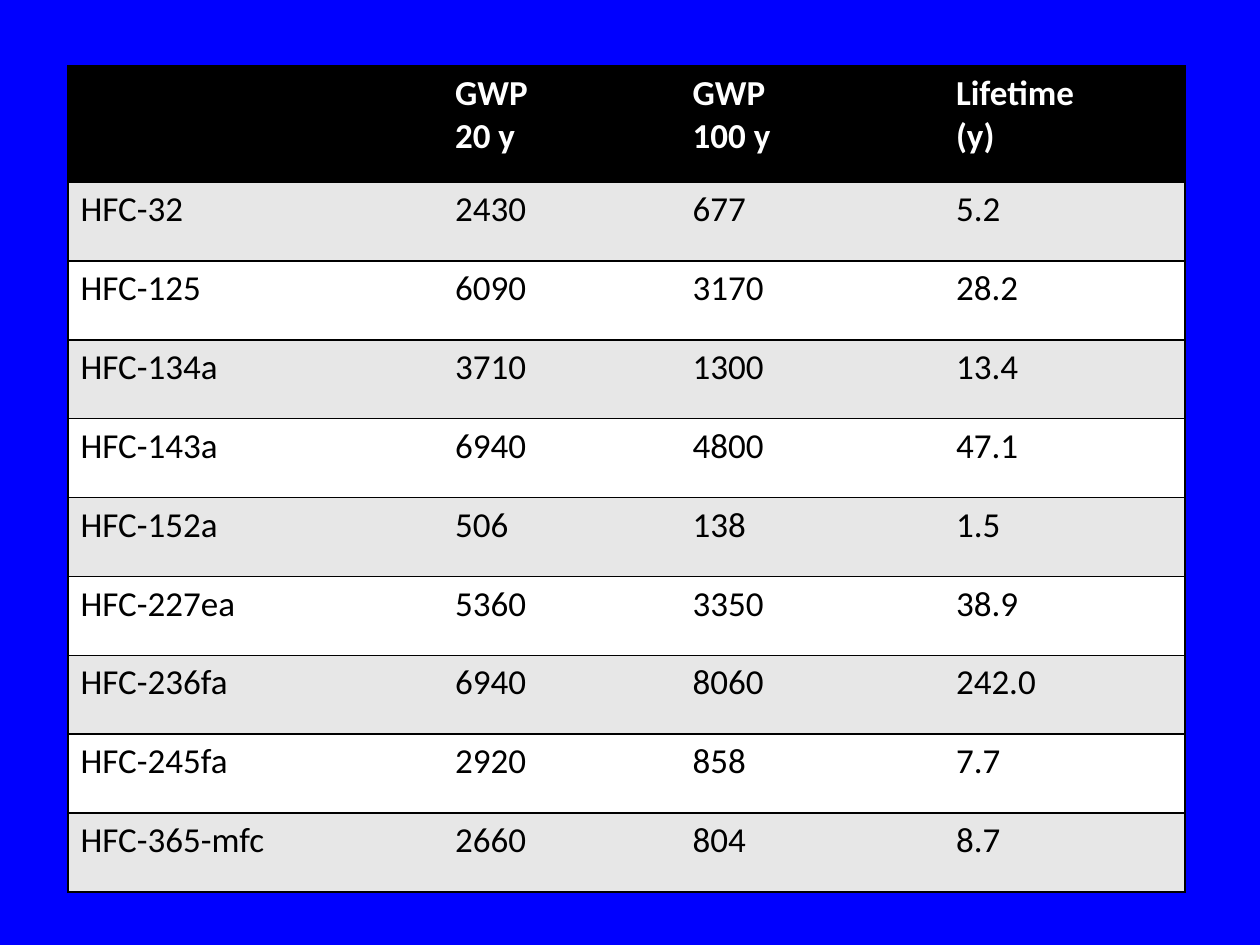
from lxml import etree
from pptx import Presentation
from pptx.dml.color import RGBColor
from pptx.oxml.ns import qn
from pptx.util import Cm, Pt

BLUE = RGBColor(0x00, 0x00, 0xFF)
BLACK = RGBColor(0x00, 0x00, 0x00)
WHITE = RGBColor(0xFF, 0xFF, 0xFF)
GREY = RGBColor(0xE7, 0xE7, 0xE7)

HEADER = ("", "GWP\n20 y", "GWP\n100 y", "Lifetime\n(y)")
GASES = [
    ("HFC-32", "2430", "677", "5.2"),
    ("HFC-125", "6090", "3170", "28.2"),
    ("HFC-134a", "3710", "1300", "13.4"),
    ("HFC-143a", "6940", "4800", "47.1"),
    ("HFC-152a", "506", "138", "1.5"),
    ("HFC-227ea", "5360", "3350", "38.9"),
    ("HFC-236fa", "6940", "8060", "242.0"),
    ("HFC-245fa", "2920", "858", "7.7"),
    ("HFC-365-mfc", "2660", "804", "8.7"),
]
ROWS = [HEADER] + GASES

LEFT, TOP = 1.37, 1.33
COL_WIDTHS = (7.55, 4.79, 5.31, 4.87)
ROW_HEIGHTS = [2.34] + [1.59] * len(GASES)
HEADER_FONT = {"name": "Calibri", "size": Pt(20), "bold": True}
BODY_FONT = {**HEADER_FONT, "bold": False}


def set_borders(cell, visible):
    """Draw the sides named in visible (of L, R, T, B) and hide the others."""
    tc_pr = cell._tc.get_or_add_tcPr()
    for side in "LRTB":
        ln = etree.SubElement(tc_pr, qn(f"a:ln{side}"), w=str(Pt(1)))
        if side in visible:
            fill = etree.SubElement(ln, qn("a:solidFill"))
            etree.SubElement(fill, qn("a:srgbClr"), val=str(BLACK))
        else:
            etree.SubElement(ln, qn("a:noFill"))


def fill_cell(cell, text, background, color, font):
    cell.fill.solid()
    cell.fill.fore_color.rgb = background
    cell.text = text
    for p in cell.text_frame.paragraphs:
        for name, value in font.items():
            setattr(p.font, name, value)
        p.font.color.rgb = color


prs = Presentation()
prs.slide_width, prs.slide_height = Cm(25.4), Cm(19.05)
s = prs.slides.add_slide(prs.slide_layouts[6])
s.background.fill.solid()
s.background.fill.fore_color.rgb = BLUE

table = s.shapes.add_table(
    len(ROWS), len(HEADER), Cm(LEFT), Cm(TOP),
    Cm(sum(COL_WIDTHS)), Cm(sum(ROW_HEIGHTS))).table
table.horz_banding = False
for column, width in zip(table.columns, COL_WIDTHS):
    column.width = Cm(width)
for row, height in zip(table.rows, ROW_HEIGHTS):
    row.height = Cm(height)

last = len(HEADER) - 1
for i, values in enumerate(ROWS):
    if i == 0:
        look = (BLACK, WHITE, HEADER_FONT)
    else:
        look = (GREY if i % 2 else WHITE, BLACK, BODY_FONT)
    for j, text in enumerate(values):
        cell = table.cell(i, j)
        set_borders(cell, "TB" + {0: "L", last: "R"}.get(j, ""))
        fill_cell(cell, text, *look)

prs.save("out.pptx")
